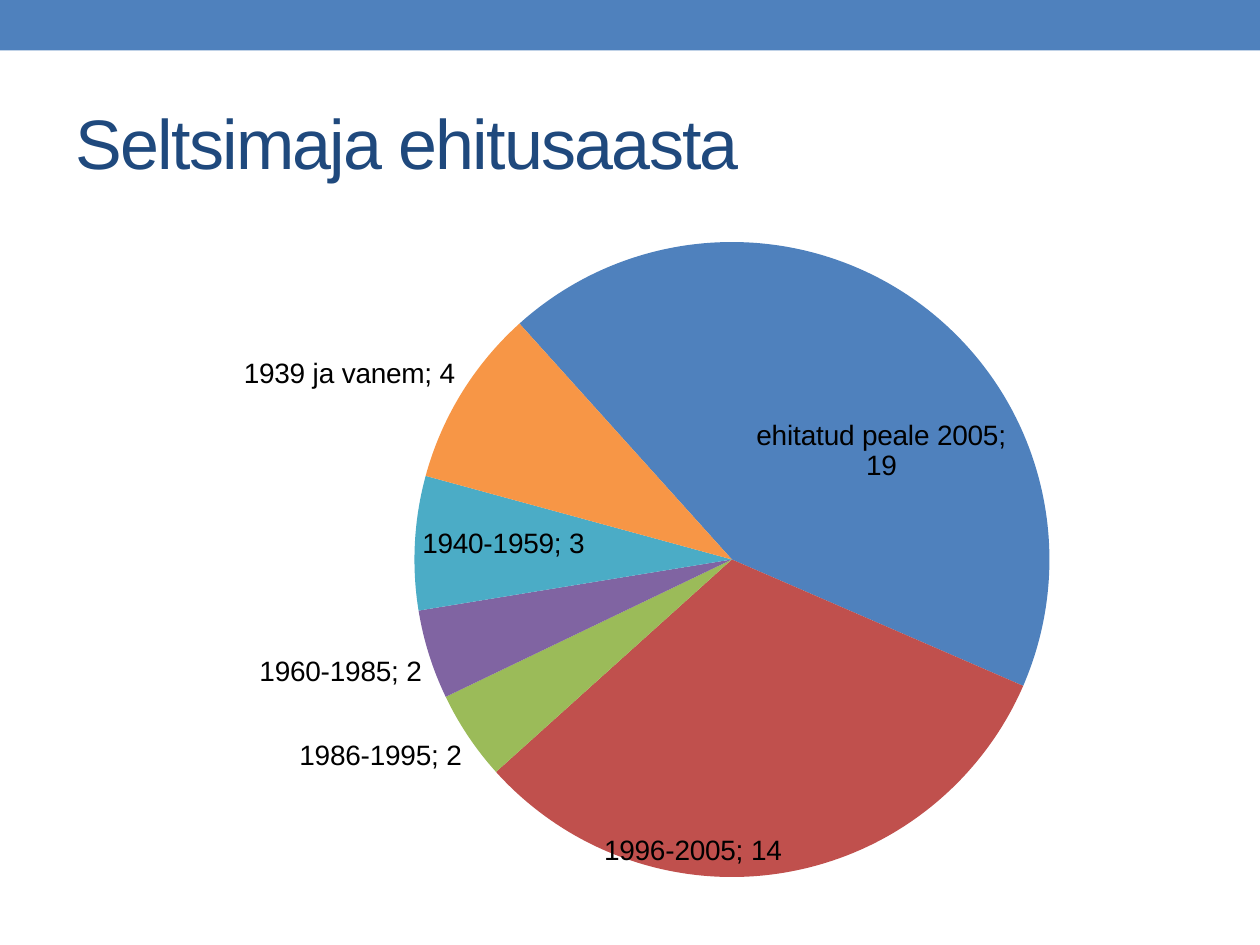
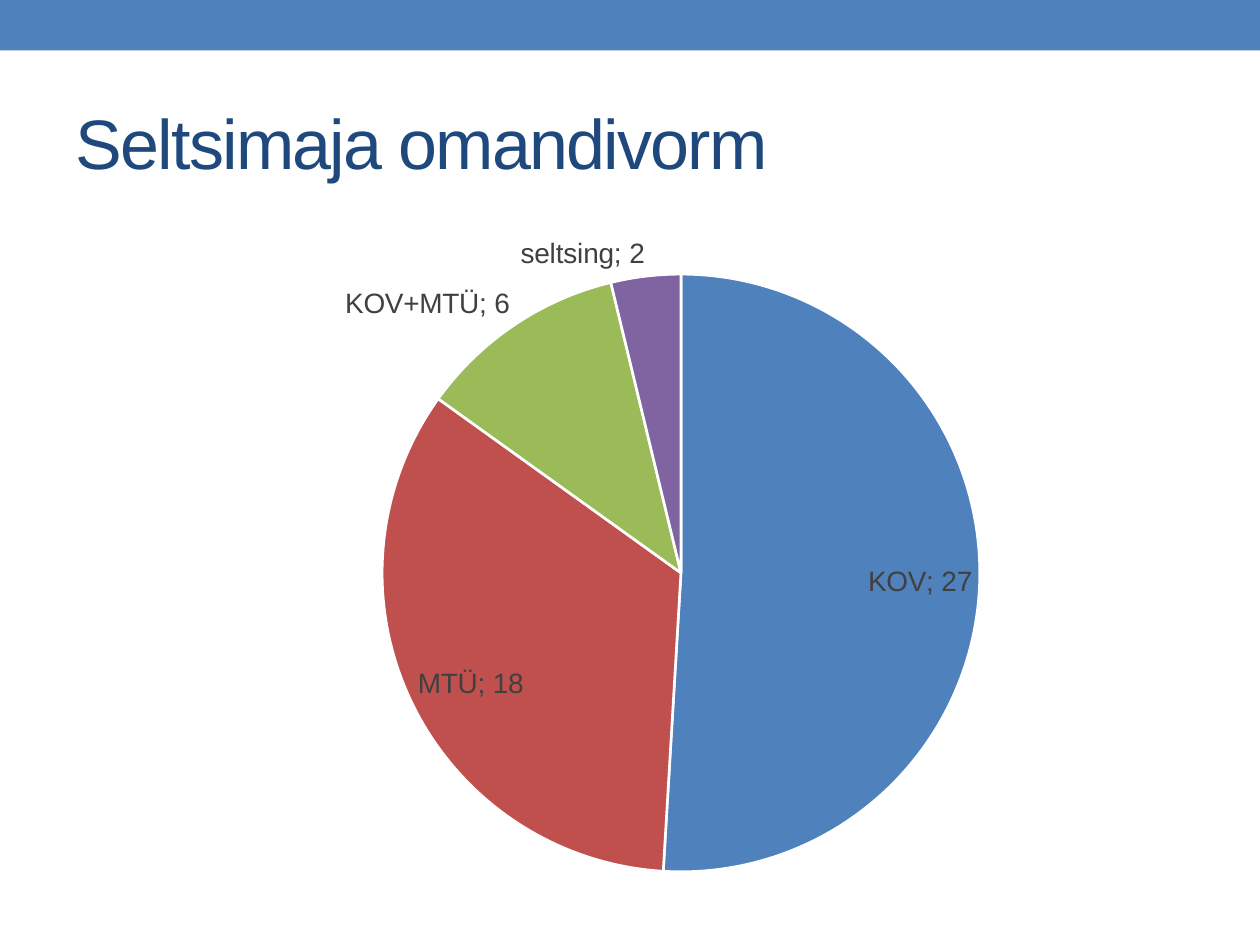
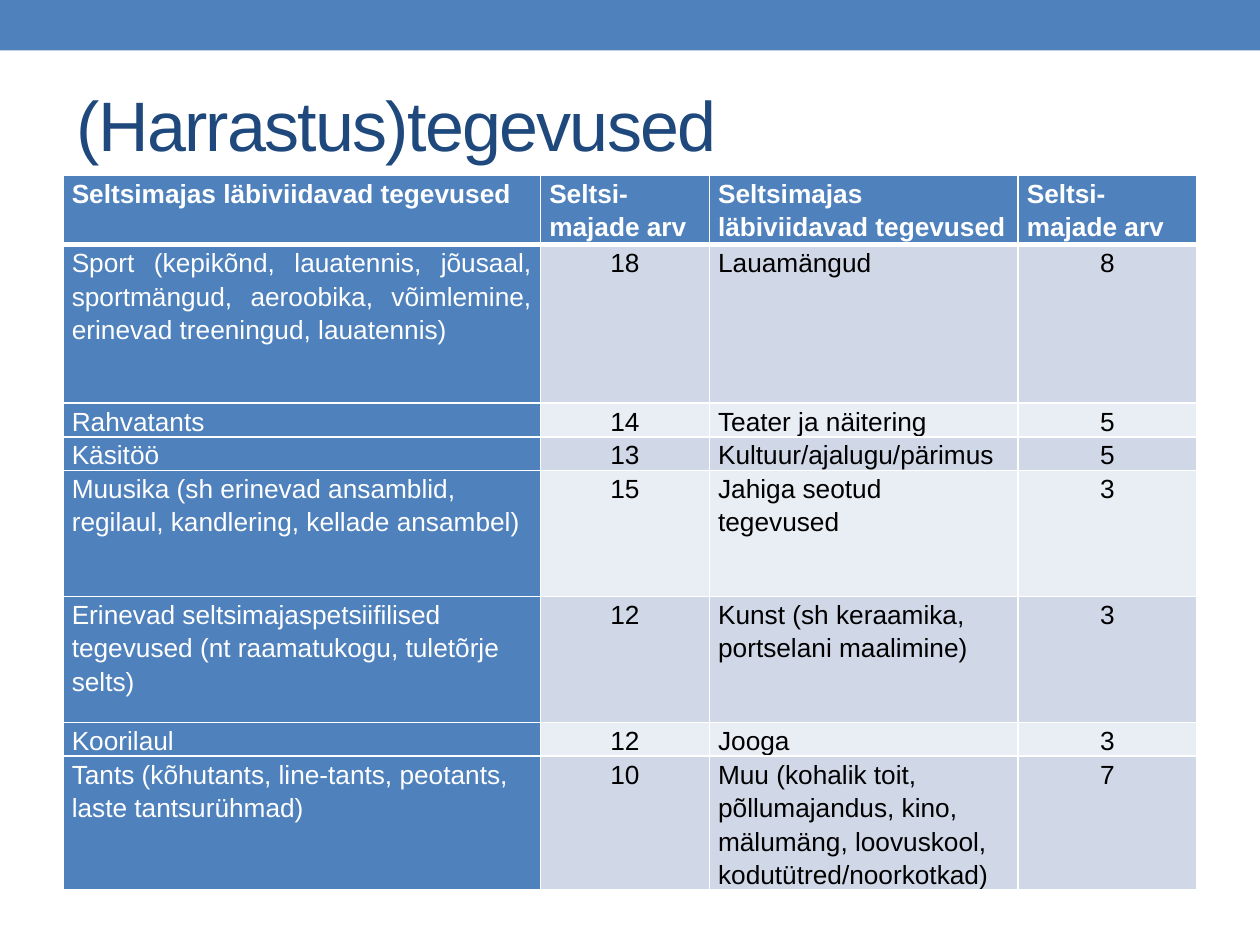
from dataclasses import dataclass

from lxml.etree import SubElement
from pptx import Presentation
from pptx.chart.data import CategoryChartData
from pptx.dml.color import RGBColor
from pptx.enum.chart import XL_CHART_TYPE, XL_LABEL_POSITION
from pptx.enum.shapes import MSO_SHAPE
from pptx.enum.text import MSO_ANCHOR, PP_ALIGN
from pptx.oxml import parse_xml
from pptx.oxml.ns import nsdecls, qn
from pptx.util import Inches, Pt


@dataclass(frozen=True)
class Theme:
    font: str = "Arial"
    band: str = "4F81BD"
    title: str = "1F497D"
    white: str = "FFFFFF"
    black: str = "000000"
    grey: str = "404040"
    stripes: tuple = ("D0D8E8", "E9EDF4")
    slices: tuple = ("4F81BD", "C0504D", "9BBB59", "8064A2", "4BACC6", "F79646")
    title_size: int = 40
    label_size: int = 16
    table_size: int = 15


THEME = Theme()
COLUMNS, ROWS = 100, 75
CONTENT = (5, 17.5, 90, 53.3)
INSIDE = XL_LABEL_POSITION.INSIDE_END
OUTSIDE = XL_LABEL_POSITION.OUTSIDE_END
CENTER = XL_LABEL_POSITION.CENTER

BUILD_YEARS = [
    ("uuem kui 2005", 19, CENTER),
    ("1996-2005", 14, INSIDE),
    ("1986-1995", 2, OUTSIDE),
    ("1960-1985", 2, OUTSIDE),
    ("1940-1959", 3, INSIDE),
    ("1939 ja vanem", 4, OUTSIDE),
]
OWNERSHIP = [
    ("KOV", 27, INSIDE),
    ("MTÜ", 18, INSIDE),
    ("KOV+MTÜ", 6, OUTSIDE),
    ("seltsing", 2, OUTSIDE),
]
HEADER = ("Seltsimajas läbiviidavad tegevused", "Seltsi-majade arv") * 2
SPORT = ("Sport (kepikõnd, lauatennis, jõusaal, sportmängud, aeroobika, "
         "võimlemine, erinevad treeningud, lauatennis)")
ACTIVITIES = [
    (SPORT, "18", "Lauamängud", "8"),
    ("Rahvatants", "14", "Teater ja näitering", "5"),
    ("Käsitöö", "13", "Kultuur/ajalugu/pärimus", "5"),
    ("Muusika (sh erinevad ansamblid, regilaul, kandlering, kellade ansambel)",
     "15", "Jahiga seotud tegevused", "3"),
    ("Erinevad seltsimajaspetsiifilised tegevused (nt raamatukogu, tuletõrje selts)",
     "12", "Kunst (sh keraamika, portselani maalimine)", "3"),
    ("Koorilaul", "12", "Jooga", "3"),
    ("Tants (kõhutants, line-tants, peotants, laste tantsurühmad)", "10",
     "Muu (kohalik toit, põllumajandus, kino, mälumäng, loovuskool, "
     "kodutütred/noorkotkad)", "7"),
]
COLUMN_WIDTHS = (37.9, 13.4, 24.5, 14.2)
ROW_HEIGHTS = (5.5, 12.6, 2.6, 2.6, 10, 10, 2.6, 10)


def grid(*cells):
    return [Inches(cell / 10) for cell in cells]


def format_font(font, size, color, bold=False):
    font.name = THEME.font
    font.size = Pt(size)
    font.bold = bold
    font.color.rgb = RGBColor.from_string(color)


def write_text(frame, text, *, size, color, bold=False, align=PP_ALIGN.LEFT,
               line_spacing=None, tracking=None):
    para = frame.paragraphs[0]
    para.alignment = align
    if line_spacing:
        para.line_spacing = line_spacing
    span = para.add_run()
    span.text = text
    format_font(span.font, size, color, bold)
    if tracking is not None:
        span.font._element.set("spc", str(tracking * 100))


def fill_solid(target, color):
    target.fill.solid()
    target.fill.fore_color.rgb = RGBColor.from_string(color)


def add_titled_slide(deck, text, left=5, top=5.8):
    slide = deck.slides.add_slide(deck.slide_layouts[5])
    band = slide.shapes.add_shape(MSO_SHAPE.RECTANGLE, *grid(0, 0, COLUMNS, 4))
    band.shadow.inherit = False
    fill_solid(band, THEME.band)
    band.line.fill.background()
    title = slide.shapes.title
    title.left, title.top, title.width, title.height = grid(left, top, 90, 10.8)
    title.text_frame.vertical_anchor = MSO_ANCHOR.MIDDLE
    write_text(title.text_frame, text, size=THEME.title_size, color=THEME.title,
               tracking=-1)
    return slide


def manual_layout(**shares):
    layout = parse_xml(f"<c:layout {nsdecls('c')}><c:manualLayout/></c:layout>")
    for name, value in shares.items():
        SubElement(layout[0], qn(f"c:{name}")).set("val", str(value))
    return layout


def place_plot(chart, x, y, w, h):
    area = chart._chartSpace.chart.plotArea
    for layout in area.findall(qn("c:layout")):
        area.remove(layout)
    area.insert(0, manual_layout(layoutTarget="inner", xMode="edge", yMode="edge",
                                 x=x, y=y, w=w, h=h))


def turn_pie(chart, angle):
    pie = chart._chartSpace.chart.plotArea.find(qn("c:pieChart"))
    first_angle = pie.find(qn("c:firstSliceAng"))
    if first_angle is None:
        first_angle = SubElement(pie, qn("c:firstSliceAng"))
    first_angle.set("val", str(angle))


def show_category_and_value(series):
    for tag in ("c:dLbls", "c:dLbl"):
        for labels in series._element.iter(qn(tag)):
            labels.find(qn("c:showCatName")).set("val", "1")
            labels.find(qn("c:showVal")).set("val", "1")
            labels.find(qn("c:showBubbleSize")).addnext(
                parse_xml(f"<c:separator {nsdecls('c')}>; </c:separator>"))


def add_pie(slide, slices, *, plot, label_color, angle=0, outline=None):
    data = CategoryChartData(number_format="###0")
    data.categories = [name for name, value, position in slices]
    data.add_series("Series 1", [value for name, value, position in slices])
    frame = slide.shapes.add_chart(XL_CHART_TYPE.PIE, *grid(*CONTENT), data)
    chart = frame.chart
    chart.has_title = False
    chart.has_legend = False
    format_font(chart.font, THEME.label_size, THEME.black)
    chart.plots[0].vary_by_categories = True
    series = chart.plots[0].series[0]
    labels = series.data_labels
    labels.show_value = True
    labels.show_category_name = True
    format_font(labels.font, THEME.label_size, label_color)
    for index, (name, value, position) in enumerate(slices):
        point = series.points[index]
        fill_solid(point.format, THEME.slices[index])
        if outline:
            point.format.line.color.rgb = RGBColor.from_string(outline)
            point.format.line.width = Pt(1.5)
        else:
            point.format.line.fill.background()
        format_font(point.data_label.font, THEME.label_size, label_color)
        point.data_label.position = position
    show_category_and_value(series)
    place_plot(chart, *plot)
    turn_pie(chart, angle)
    return series


def rename_label(series, index, text, *, shift):
    label = series.points[index].data_label
    write_text(label.text_frame, text, size=THEME.label_size, color=THEME.black,
               align=PP_ALIGN.CENTER)
    entry = series._element.findall(".//" + qn("c:dLbl"))[index]
    entry.find(qn("c:idx")).addnext(manual_layout(x=shift[0], y=shift[1]))


def add_borders(cell, bottom):
    properties = cell._tc.get_or_add_tcPr()
    for index, (side, width) in enumerate(
            (("L", 1), ("R", 1), ("T", 1), ("B", bottom))):
        properties.insert(index, parse_xml(
            f'<a:ln{side} {nsdecls("a")} w="{Pt(width)}"><a:solidFill>'
            f'<a:srgbClr val="{THEME.white}"/></a:solidFill></a:ln{side}>'))


def format_cell(cell, text, row, column):
    header = row == 0
    strong = header or column == 0
    cell.margin_left = cell.margin_right = Inches(0.07)
    cell.margin_top = cell.margin_bottom = 0
    fill_solid(cell, THEME.band if strong else THEME.stripes[(row - 1) % 2])
    add_borders(cell, bottom=3 if header else 1)
    align = PP_ALIGN.LEFT
    if text == SPORT or header and column % 2:
        align = PP_ALIGN.JUSTIFY
    elif column % 2:
        align = PP_ALIGN.CENTER
    write_text(cell.text_frame, text, size=THEME.table_size, bold=header,
               color=THEME.white if strong else THEME.black,
               align=align, line_spacing=1.15)


def add_activity_table(slide):
    rows = [HEADER, *ACTIVITIES]
    area = grid(5, 13.9, sum(COLUMN_WIDTHS), sum(ROW_HEIGHTS))
    table = slide.shapes.add_table(len(rows), len(HEADER), *area).table
    for column, width in zip(table.columns, grid(*COLUMN_WIDTHS)):
        column.width = width
    for row, height in zip(table.rows, grid(*ROW_HEIGHTS)):
        row.height = height
    for row, texts in enumerate(rows):
        for column, text in enumerate(texts):
            format_cell(table.cell(row, column), text, row, column)


def main():
    deck = Presentation()
    deck.slide_width, deck.slide_height = grid(COLUMNS, ROWS)

    slide = add_titled_slide(deck, "Seltsimaja ehitusaasta")
    series = add_pie(slide, BUILD_YEARS, plot=(0.31, 0.03, 0.56, 0.95),
                     label_color=THEME.black, angle=318)
    rename_label(series, 0, "ehitatud peale 2005; 19", shift=(0.05, 0.03))

    slide = add_titled_slide(deck, "Seltsimaja omandivorm")
    add_pie(slide, OWNERSHIP, plot=(0.28, 0.08, 0.53, 0.89),
            label_color=THEME.grey, outline=THEME.white)

    slide = add_titled_slide(deck, "(Harrastus)tegevused", left=5.1, top=4.4)
    add_activity_table(slide)

    deck.save("out.pptx")


if __name__ == "__main__":
    main()
